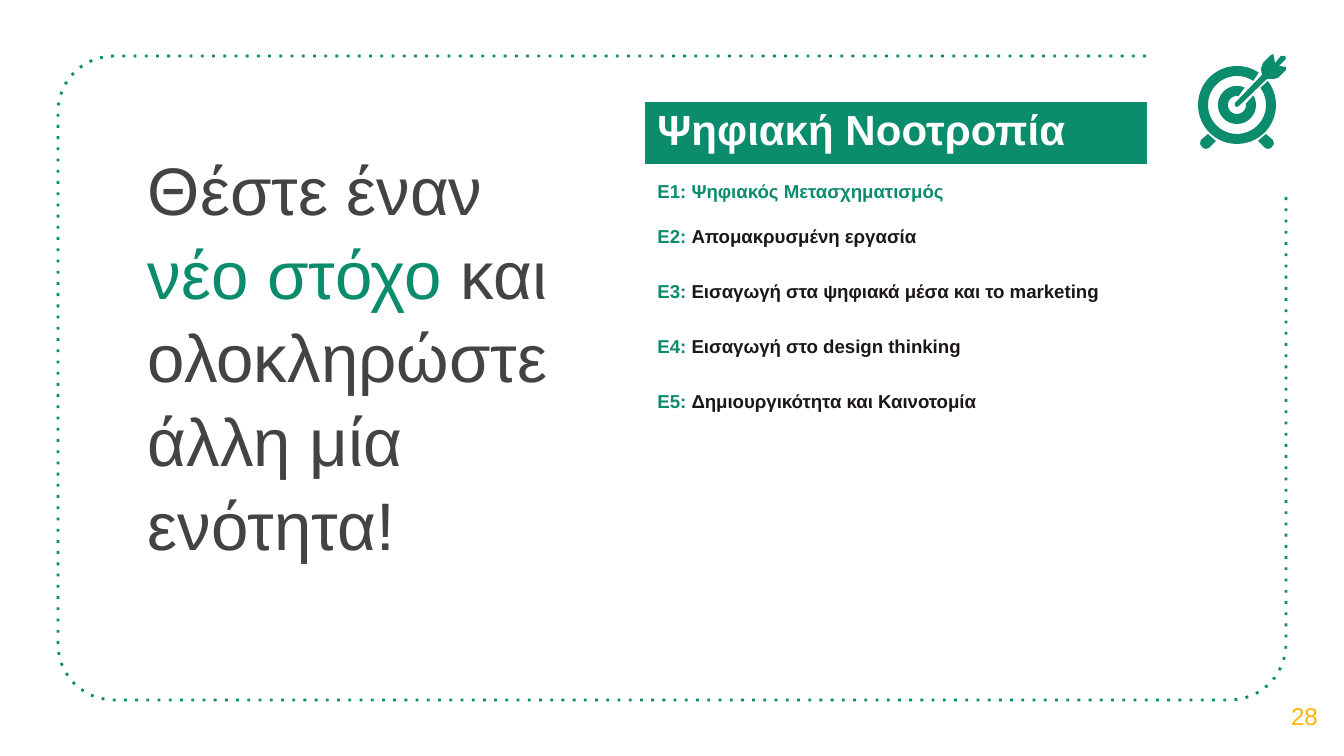
from math import cos, radians, sin

from pptx import Presentation
from pptx.dml.color import RGBColor
from pptx.enum.dml import MSO_LINE
from pptx.enum.text import MSO_ANCHOR, PP_ALIGN
from pptx.oxml.ns import qn
from pptx.util import Pt

GREEN = RGBColor(0x0A, 0x8C, 0x6D)
GREY = RGBColor(0x43, 0x43, 0x43)
BLACK = RGBColor(0x1A, 0x17, 0x14)
WHITE = RGBColor(0xFF, 0xFF, 0xFF)
YELLOW = RGBColor(0xFF, 0xB6, 0x00)

EMU_PER_PX = 914400 / 134.4


def px(length):
    return round(length * EMU_PER_PX)


def arc(center, radius, start, end, steps=12):
    angles = [radians(start + (end - start) * i / steps) for i in range(steps + 1)]
    return [(center[0] + radius * cos(a), center[1] + radius * sin(a)) for a in angles]


class SlideBuilder:
    font = "Arial"
    accent = GREEN

    def __init__(self, page):
        self.page = page

    def add_spans(self, para, spans, size, bold=False):
        para.font.name = self.font
        para.font.size = Pt(size)
        para.font.bold = bold
        for text, color in spans:
            span = para.add_run()
            span.text = text
            span.font.color.rgb = color

    def text(self, spans, left, top, width, height, size, anchor=MSO_ANCHOR.TOP,
             align=PP_ALIGN.LEFT, line_spacing=1.0):
        box = self.page.shapes.add_textbox(px(left), px(top), px(width), px(height))
        frame = box.text_frame
        frame.word_wrap = True
        frame.vertical_anchor = anchor
        frame.margin_left = frame.margin_right = px(13)
        frame.margin_top = frame.margin_bottom = px(13)
        para = frame.paragraphs[0]
        para.alignment = align
        para.line_spacing = line_spacing
        self.add_spans(para, spans, size)

    def outline(self, points, shapes, close):
        corners = [(px(x), px(y)) for x, y in points]
        builder = shapes.build_freeform(*corners[0], scale=1.0)
        builder.add_line_segments(corners[1:], close=close)
        shape = builder.convert_to_shape()
        shape.shadow.inherit = False
        return shape

    def dotted_path(self, points):
        shape = self.outline(points, self.page.shapes, close=False)
        shape.fill.background()
        shape.line.color.rgb = self.accent
        shape.line.width = Pt(1.5)
        shape.line.dash_style = MSO_LINE.ROUND_DOT
        shape.element.find(".//" + qn("a:prstDash")).set("val", "dot")

    def icon(self, center, parts):
        group = self.page.shapes.add_group_shape()
        for part in parts:
            points = [(center[0] + x, center[1] + y) for x, y in part]
            shape = self.outline(points, group.shapes, close=True)
            shape.fill.solid()
            shape.fill.fore_color.rgb = self.accent
            shape.line.fill.background()

    def unit_table(self, heading, units, left, top, width, head_height, row_height):
        height = head_height + row_height * len(units)
        table = self.page.shapes.add_table(
            len(units) + 1, 1, px(left), px(top), px(width), px(height)).table
        table.first_row = table.horz_banding = False
        for row in table.rows:
            row.height = px(row_height)
        table.rows[0].height = px(head_height)
        head = table.cell(0, 0)
        head.fill.solid()
        head.fill.fore_color.rgb = self.accent
        self.add_spans(head.text_frame.paragraphs[0], [(heading, WHITE)], 22.5, bold=True)
        for number, (title, color) in enumerate(units, 1):
            cell = table.cell(number, 0)
            cell.fill.background()
            spans = [(f"Ε{number}: ", self.accent), (title, color)]
            self.add_spans(cell.text_frame.paragraphs[0], spans, 10, bold=True)
        table.cell(1, 0).vertical_anchor = MSO_ANCHOR.MIDDLE


def frame_points(left, top, right, bottom, radius):
    near, far = left + radius, right - radius
    upper, lower = top + radius, bottom - radius
    return [(1146, top),
            *arc((near, upper), radius, 270, 180),
            *arc((near, lower), radius, 180, 90),
            *arc((far, lower), radius, 90, 0),
            (right, 196)]


def open_ring(outer, inner, outer_gap, inner_gap):
    return (arc((0, 0), outer, outer_gap[0], outer_gap[1] - 360, 48)
            + arc((0, 0), inner, inner_gap[1] - 360, inner_gap[0], 48))


def target_parts():
    foot = [(-29, 29), (-36, 35), (-37, 39), (-34, 43), (-31, 44), (-28, 43), (-21, 36)]
    arrow = [(36, -51), (34, -50), (26, -42), (24, -36), (25, -30), (-2, -2),
             (-2, 1), (0, 2), (2, 1), (30, -26), (37, -26), (41, -27), (49, -35),
             (49, -38), (42, -39), (48, -45), (49, -47), (48, -49), (44, -49),
             (38, -42), (37, -49)]
    return [open_ring(39, 29, (-56, -38), (-56, -36)),
            open_ring(19, 9, (-66, -30), (-80, -9)),
            foot,
            [(-x, y) for x, y in foot],
            arrow]


def main():
    deck = Presentation()
    deck.slide_width, deck.slide_height = px(1344), px(756)
    builder = SlideBuilder(deck.slides.add_slide(deck.slide_layouts[6]))

    builder.dotted_path(frame_points(58, 56, 1286, 700, 56))
    builder.text([("Θέστε έναν ", GREY), ("νέο στόχο ", GREEN),
                  ("και ολοκληρώστε άλλη μία ενότητα!", GREY)],
                 135, 132, 441, 430, 36, line_spacing=1.04)
    builder.text([("28", YELLOW)], 1265, 675, 79, 81, 13,
                 MSO_ANCHOR.MIDDLE, PP_ALIGN.CENTER)
    builder.icon((1237, 105), target_parts())
    builder.unit_table("Ψηφιακή Νοοτροπία", [
        ("Ψηφιακός Μετασχηματισμός", GREEN),
        ("Απομακρυσμένη εργασία", BLACK),
        ("Εισαγωγή στα ψηφιακά μέσα και το marketing", BLACK),
        ("Εισαγωγή στο design thinking", BLACK),
        ("Δημιουργικότητα και Καινοτομία", BLACK),
    ], 644, 101, 504, 61, 55)

    deck.save("out.pptx")


if __name__ == "__main__":
    main()
